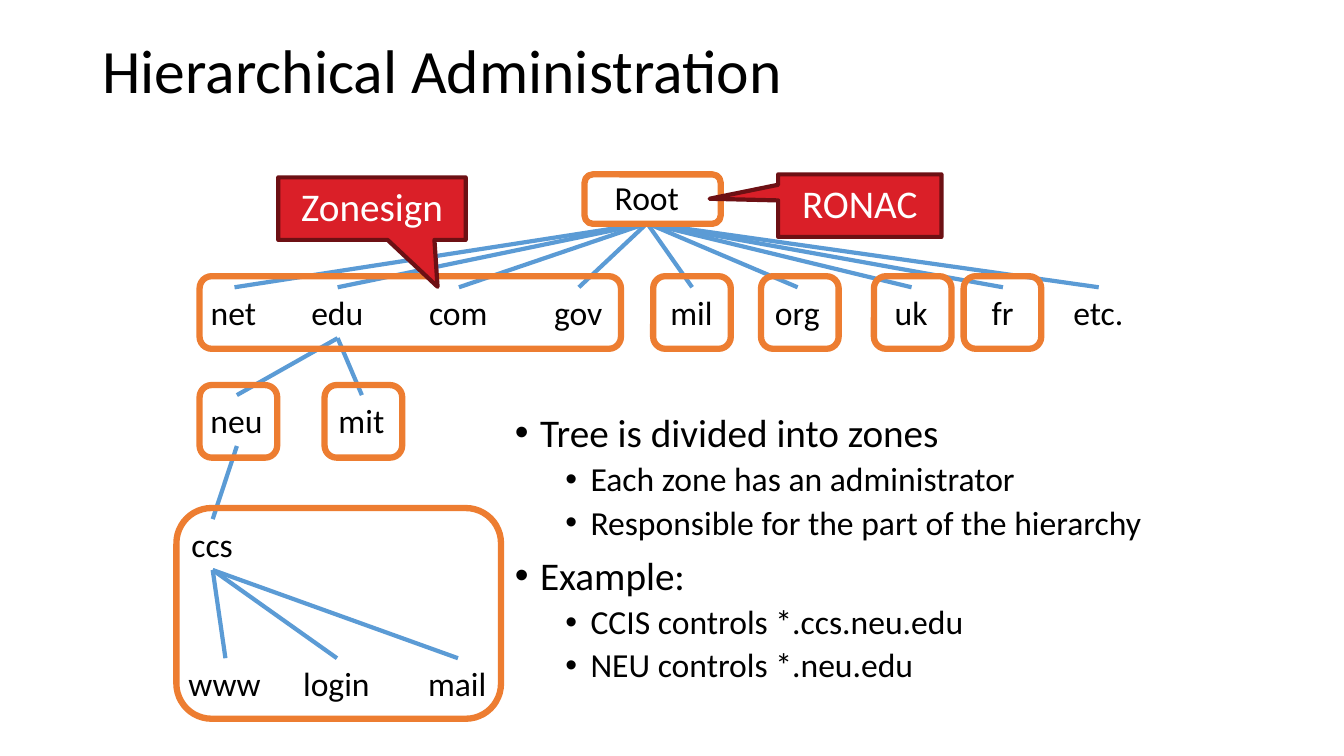
from dataclasses import dataclass

from lxml import etree
from pptx import Presentation
from pptx.dml.color import RGBColor
from pptx.enum.shapes import MSO_CONNECTOR, MSO_SHAPE
from pptx.enum.text import MSO_ANCHOR, MSO_AUTO_SIZE, PP_ALIGN
from pptx.oxml.ns import qn
from pptx.shapes.autoshape import Shape
from pptx.shapes.shapetree import SlideShapes
from pptx.text.text import _Paragraph
from pptx.util import Inches, Pt

STRAIGHT = MSO_CONNECTOR.STRAIGHT
ROUNDED = MSO_SHAPE.ROUNDED_RECTANGLE
CALLOUT = MSO_SHAPE.RECTANGULAR_CALLOUT
MIDDLE = MSO_ANCHOR.MIDDLE
TOP = MSO_ANCHOR.TOP
FIT_SHAPE = MSO_AUTO_SIZE.SHAPE_TO_FIT_TEXT
CENTER = PP_ALIGN.CENTER

WIDTH, HEIGHT = Inches(13.33), Inches(7.5)
COLUMN, ROW = WIDTH / 40, HEIGHT / 30
FONT = "Calibri"
COLORS = {
    "text": "000000",
    "branch": "5B9BD5",
    "zone": "ED7D31",
    "callout": "DA1F28",
    "callout_edge": "6D1014",
    "callout_text": "FFFFFF",
}
LABEL_ROWS = 2.02
ROOT_ROW, DOMAIN_ROW, SCHOOL_ROW, COLLEGE_ROW, HOST_ROW = 6.84, 11.4, 15.68, 20.6, 26.12


@dataclass(frozen=True)
class Area:
    column: float
    row: float
    columns: float
    rows: float

    def box(self) -> tuple[int, int, int, int]:
        return (round(self.column * COLUMN), round(self.row * ROW),
                round(self.columns * COLUMN), round(self.rows * ROW))


@dataclass(frozen=True)
class Domain:
    name: str
    center: float
    row: float
    columns: float
    parent: str = ""


@dataclass(frozen=True)
class Administrator:
    name: str
    area: Area
    tip: tuple[float, float]


@dataclass(frozen=True)
class Point:
    text: str
    level: int = 0


TITLE_AREA = Area(2.75, 0, 34.5, 5.8)
POINTS_AREA = Area(15.03, 14, 19.47, 15.6)
DOMAINS = [
    Domain("Root", 19.26, ROOT_ROW, 2.52),
    Domain("edu", 10.05, DOMAIN_ROW, 2.16, "Root"),
    Domain("com", 13.66, DOMAIN_ROW, 2.37, "Root"),
    Domain("gov", 17.23, DOMAIN_ROW, 2.07, "Root"),
    Domain("mil", 20.6, DOMAIN_ROW, 1.89, "Root"),
    Domain("org", 23.74, DOMAIN_ROW, 1.95, "Root"),
    Domain("net", 6.98, DOMAIN_ROW, 2.01, "Root"),
    Domain("uk", 27.13, DOMAIN_ROW, 1.59, "Root"),
    Domain("fr", 29.85, DOMAIN_ROW, 1.26, "Root"),
    Domain("etc.", 32.7, DOMAIN_ROW, 2.1, "Root"),
    Domain("neu", 7.05, SCHOOL_ROW, 2.16, "edu"),
    Domain("mit", 10.77, SCHOOL_ROW, 1.98, "edu"),
    Domain("ccs", 6.33, COLLEGE_ROW, 1.86, "neu"),
    Domain("www", 6.71, HOST_ROW, 2.79, "ccs"),
    Domain("login", 10.03, HOST_ROW, 2.61, "ccs"),
    Domain("mail", 13.63, HOST_ROW, 2.37, "ccs"),
]
SINGLE_ZONES = [(5.94, 15.28), (9.66, 15.28), (26.01, 10.96),
                (28.68, 10.96), (22.65, 10.96), (19.44, 10.96)]
ZONES = [
    Area(17.4, 6.92, 4.05, 1.96),
    Area(5.25, 20.16, 9.66, 8.36),
    *(Area(column, row, 2.31, 2.88) for column, row in SINGLE_ZONES),
    Area(5.94, 10.96, 12.54, 2.88),
]
ADMINISTRATORS = [
    Administrator("RONAC", Area(23.16, 6.92, 4.86, 2.48), (-0.92, -0.11)),
    Administrator("Zonesign", Area(8.28, 7.04, 5.58, 2.48), (0.35, 1.25)),
]
POINTS = [
    Point("Tree is divided into zones"),
    Point("Each zone has an administrator", 1),
    Point("Responsible for the part of the hierarchy", 1),
    Point("Example:"),
    Point("CCIS controls *.ccs.neu.edu", 1),
    Point("NEU controls *.neu.edu", 1),
]


def rgb(role: str) -> RGBColor:
    return RGBColor.from_string(COLORS[role])


def write(paragraph: _Paragraph, text: str, size: float, role: str = "text") -> None:
    paragraph.text = text
    for run in paragraph.runs:
        run.font.name = FONT
        run.font.size = Pt(size)
        run.font.color.rgb = rgb(role)


def add_title(shapes: SlideShapes, text: str) -> None:
    title = shapes.add_textbox(*TITLE_AREA.box())
    frame = title.text_frame
    frame.word_wrap = True
    frame.vertical_anchor = MIDDLE
    write(frame.paragraphs[0], text, 44)
    frame.paragraphs[0].line_spacing = 0.9


def add_points(shapes: SlideShapes, points: list[Point]) -> None:
    frame = shapes.add_textbox(*POINTS_AREA.box()).text_frame
    frame.word_wrap = True
    frame.vertical_anchor = MIDDLE
    for index, point in enumerate(points):
        paragraph = frame.add_paragraph() if index else frame.paragraphs[0]
        write(paragraph, point.text, 24 if point.level else 28)
        paragraph.level = point.level
        paragraph.line_spacing = 0.9
        paragraph.space_before = Pt(5 if point.level else 10)
        properties = paragraph._p.get_or_add_pPr()
        properties.set("marL", str(Inches(0.25 + 0.5 * point.level)))
        properties.set("indent", str(Inches(-0.25)))
        etree.SubElement(properties, qn("a:buFont")).set("typeface", "Arial")
        etree.SubElement(properties, qn("a:buChar")).set("char", "•")


def add_domain(shapes: SlideShapes, domain: Domain) -> Shape:
    area = Area(domain.center - domain.columns / 2, domain.row, domain.columns, LABEL_ROWS)
    label = shapes.add_textbox(*area.box())
    label.text_frame.word_wrap = False
    label.text_frame.auto_size = FIT_SHAPE
    write(label.text_frame.paragraphs[0], domain.name, 24)
    return label


def add_branch(shapes: SlideShapes, parent: Shape, child: Shape) -> None:
    branch = shapes.add_connector(STRAIGHT, 0, 0, 0, 0)
    branch.begin_connect(parent, 2)
    branch.end_connect(child, 0)
    branch.line.color.rgb = rgb("branch")
    branch.line.width = Pt(3)
    etree.SubElement(branch._element.spPr, qn("a:effectLst"))


def add_zone(shapes: SlideShapes, area: Area) -> None:
    zone = shapes.add_shape(ROUNDED, *area.box())
    zone.shadow.inherit = False
    zone.fill.background()
    zone.line.color.rgb = rgb("zone")
    zone.line.width = Pt(4.5)


def add_administrator(shapes: SlideShapes, administrator: Administrator) -> None:
    callout = shapes.add_shape(CALLOUT, *administrator.area.box())
    callout.shadow.inherit = False
    callout.adjustments[0], callout.adjustments[1] = administrator.tip
    callout.fill.solid()
    callout.fill.fore_color.rgb = rgb("callout")
    callout.line.color.rgb = rgb("callout_edge")
    callout.line.width = Pt(3)
    callout.text_frame.vertical_anchor = TOP
    caption = callout.text_frame.paragraphs[0]
    write(caption, administrator.name, 28, "callout_text")
    caption.alignment = CENTER


def main() -> None:
    """Build the slide on the administration of the domain name hierarchy."""
    deck = Presentation()
    deck.slide_width, deck.slide_height = WIDTH, HEIGHT
    shapes = deck.slides.add_slide(deck.slide_layouts[6]).shapes
    add_title(shapes, "Hierarchical Administration")
    add_points(shapes, POINTS)
    labels = {domain.name: add_domain(shapes, domain) for domain in DOMAINS}
    for domain in DOMAINS:
        if domain.parent:
            add_branch(shapes, labels[domain.parent], labels[domain.name])
    for zone in ZONES:
        add_zone(shapes, zone)
    for administrator in ADMINISTRATORS:
        add_administrator(shapes, administrator)
    deck.save("out.pptx")


if __name__ == "__main__":
    main()
